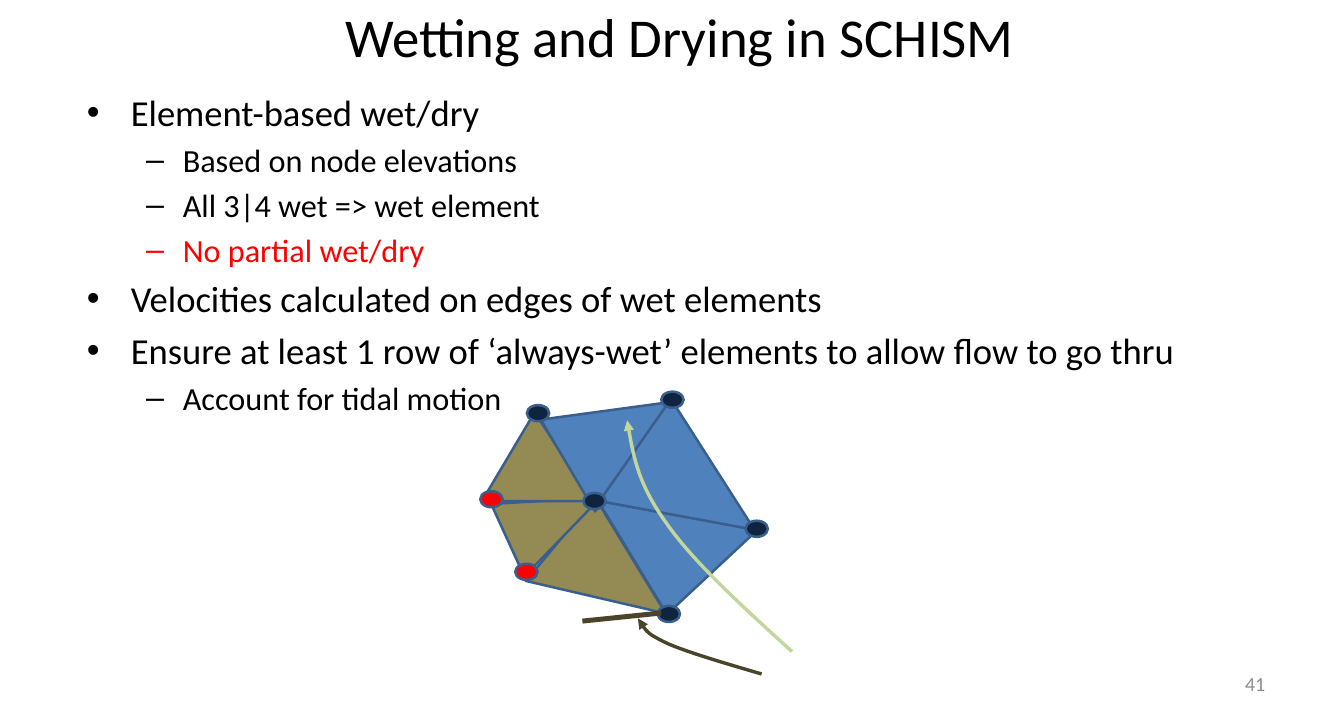
import pptx
import pptx.util
import pptx.dml.color
import pptx.enum.shapes
import pptx.enum.text
import pptx.oxml.ns
import lxml.etree

Inches, Pt = pptx.util.Inches, pptx.util.Pt
RGB = pptx.dml.color.RGBColor.from_string
MSO = pptx.enum.shapes.MSO_SHAPE
ALIGN = pptx.enum.text.PP_ALIGN
ANCHOR = pptx.enum.text.MSO_ANCHOR
qn = pptx.oxml.ns.qn

COLORS = {
    "text": "000000", "alert": "FF0000", "number": "8C8C8C",
    "wet": "4F81BD", "dry": "948A54", "edge": "3A5F8C",
    "wet_node": "0F243E", "dry_node": "FF0000",
    "flow": "C3D69B", "barrier": "4A452A",
}

prs = pptx.Presentation()
prs.slide_width, prs.slide_height = Inches(15), Inches(8)
s = prs.slides.add_slide(prs.slide_layouts[6])


def add_box(left, top, width, height, anchor):
    tf = s.shapes.add_textbox(*map(Inches, (left, top, width, height))).text_frame
    tf.word_wrap = True
    tf.vertical_anchor = anchor
    tf.margin_left = tf.margin_right = Inches(0.13)
    tf.margin_top = tf.margin_bottom = Inches(0.07)
    return tf


def add_run(p, text, size, color):
    r = p.add_run()
    r.text = text
    r.font.name = "Calibri"
    r.font.size = Pt(size)
    r.font.color.rgb = RGB(COLORS[color])


p = add_box(0.84, 0.04, 13.5, 0.72, ANCHOR.MIDDLE).paragraphs[0]
p.alignment = ALIGN.CENTER
add_run(p, "Wetting and Drying in SCHISM", 44, "text")

bullets = [
    (0, "Element-based wet/dry", "text"),
    (1, "Based on node elevations", "text"),
    (1, "All 3|4 wet => wet element", "text"),
    (1, "No partial wet/dry", "alert"),
    (0, "Velocities calculated on edges of wet elements", "text"),
    (0, "Ensure at least 1 row of ‘always-wet’ elements to allow flow to go thru", "text"),
    (1, "Account for tidal motion", "text"),
]
levels = [("•", 0.49, -0.49, 29.4), ("–", 1.07, -0.41, 25.9)]
tf = add_box(0.84, 0.93, 13.5, 3.32, ANCHOR.TOP)
for i, (level, text, color) in enumerate(bullets):
    char, margin, indent, size = levels[level]
    p = tf.add_paragraph() if i else tf.paragraphs[0]
    p.level = level
    pPr = p._p.get_or_add_pPr()
    pPr.set("marL", str(Inches(margin)))
    pPr.set("indent", str(Inches(indent)))
    lxml.etree.SubElement(pPr, qn("a:buFont")).set("typeface", "Arial")
    lxml.etree.SubElement(pPr, qn("a:buChar")).set("char", char)
    if i:
        p.space_before = Pt(round(size * 0.2, 1))
    add_run(p, text, size, color)

elements = [
    (6.56, 5.74, 1.81, 1.11, 190.3, 0.457, "wet"),
    (6.2, 5.76, 1.21, 1.43, 129.8, 0.405, "dry"),
    (5.74, 5.22, 0.89, 1.14, 65.4, 0.5, "dry"),
    (5.38, 4.6, 1.23, 0.99, 0, 0.478, "dry"),
    (6.35, 4.13, 1.19, 1.41, 59.4, 0.5, "wet"),
    (7.05, 4.68, 1.39, 1.6, 125, 0.475, "wet"),
]
nodes = [
    (5.88, 4.52, "wet_node"), (5.36, 5.48, "dry_node"),
    (7.38, 4.37, "wet_node"), (6.51, 5.5, "wet_node"),
    (5.75, 6.29, "dry_node"), (7.34, 6.76, "wet_node"),
    (8.32, 5.81, "wet_node"),
]
mesh = [(MSO.ISOSCELES_TRIANGLE, *element) for element in elements]
mesh += [(MSO.OVAL, x, y, 0.25, 0.18, 0, None, color) for x, y, color in nodes]
for preset, left, top, width, height, rotation, apex, color in mesh:
    sp = s.shapes.add_shape(preset, *map(Inches, (left, top, width, height)))
    sp.rotation = rotation
    if apex is not None:
        sp.adjustments[0] = apex
    sp.shadow.inherit = False
    sp.fill.solid()
    sp.fill.fore_color.rgb = RGB(COLORS[color])
    sp.line.color.rgb = RGB(COLORS["edge"])
    sp.line.width = Pt(2)

arrows = [
    ("flow", [(8.84, 7.27), (8.29, 6.77), (7.74, 6.27), (7.44, 5.84),
              (7.13, 5.41), (7.06, 5.05), (7, 4.69)]),
    ("barrier", [(8.5, 7.52), (8.09, 7.4), (7.68, 7.28), (7.45, 7.18),
                 (7.22, 7.07), (7.17, 6.99), (7.12, 6.9)]),
]
for color, points in arrows:
    points = [(Inches(x), Inches(y)) for x, y in points]
    builder = s.shapes.build_freeform(*points[0])
    builder.add_line_segments(points[1:], close=False)
    sp = builder.convert_to_shape()
    sp.shadow.inherit = False
    sp.fill.background()
    sp.line.color.rgb = RGB(COLORS[color])
    sp.line.width = Pt(2.75)
    lxml.etree.SubElement(sp.line._get_or_add_ln(), qn("a:tailEnd")).set("type", "triangle")
    outline = sp._element.find(".//" + qn("a:path"))
    segments = outline.findall(qn("a:lnTo"))
    for start in range(0, len(segments), 3):
        curve = lxml.etree.SubElement(outline, qn("a:cubicBezTo"))
        for segment in segments[start:start + 3]:
            curve.append(segment[0])
            outline.remove(segment)

barrier = s.shapes.add_connector(
    pptx.enum.shapes.MSO_CONNECTOR.STRAIGHT, *map(Inches, (6.5, 6.93, 7.38, 6.84)))
barrier.line.color.rgb = RGB(COLORS["barrier"])
barrier.line.width = Pt(4)
lxml.etree.SubElement(barrier._element.spPr, qn("a:effectLst"))

p = add_box(10.75, 7.41, 3.5, 0.43, ANCHOR.MIDDLE).paragraphs[0]
p.alignment = ALIGN.RIGHT
add_run(p, "41", 16, "number")

prs.save("out.pptx")
